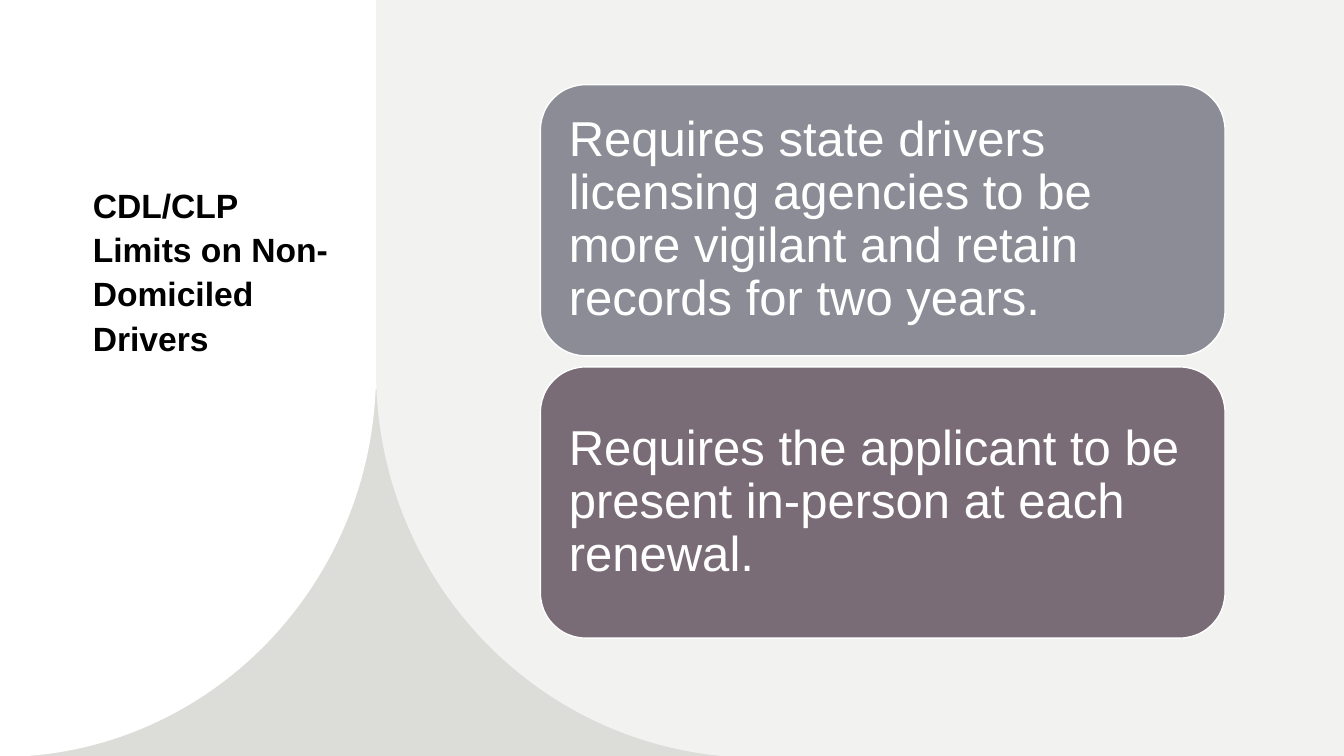
from lxml import etree
from pptx import Presentation
from pptx.dml.color import RGBColor
from pptx.enum.shapes import MSO_SHAPE
from pptx.enum.text import MSO_ANCHOR, MSO_AUTO_SIZE, PP_ALIGN
from pptx.oxml.ns import qn
from pptx.util import Inches, Pt

RECT, ROUNDED = MSO_SHAPE.RECTANGLE, MSO_SHAPE.ROUNDED_RECTANGLE
TOP, MIDDLE = MSO_ANCHOR.TOP, MSO_ANCHOR.MIDDLE
LEFT = PP_ALIGN.LEFT

TITLE = "CDL/CLP Limits on Non-Domiciled Drivers"
CARDS = [
    ("Requires state drivers licensing agencies to be more vigilant and retain records for two years.", "card_1"),
    ("Requires the applicant to be present in-person at each renewal.", "card_2"),
]

THEME = {
    "font": "Arial", "title_size": 24, "card_size": 35,
    "title": "000000", "white": "FFFFFF", "base": "DCDDD8", "panel": "F2F3F1",
    "card_1": "8C8C96", "card_2": "7A6C76",
}

WIDTH, HEIGHT = 13.33, 7.5
SPLIT = 3.73  # edge between the white and the grey panel
CARD_LEFT, CARD_TOP, CARD_W, CARD_H, CARD_GAP = 5.36, 0.84, 6.79, 2.69, 0.11

# Straight corners, then one curve: two control points and its end
WHITE_PANEL = ([(0, 0), (SPLIT, 0), (SPLIT, 3.69)],
               [(SPLIT, 5.8), (2.06, 7.51), (0, 7.51)])
GREY_PANEL = ([(SPLIT, 0), (WIDTH, 0), (WIDTH, 7.51), (7.29, 7.51)],
              [(5.3, 7.39), (SPLIT, 5.73), (SPLIT, 3.68)])


def color(name):
    return RGBColor.from_string(THEME[name])


def paint(shape, fill):
    shape.shadow.inherit = False
    shape.fill.solid()
    shape.fill.fore_color.rgb = color(fill)
    shape.line.fill.background()


def add_panel(s, corners, curve, fill):
    """Draw an outline whose last three points become one Bezier segment."""
    points = [(Inches(x), Inches(y)) for x, y in corners + curve]
    builder = s.shapes.build_freeform(*points[0], scale=1.0)
    builder.add_line_segments(points[1:], close=True)
    panel = builder.convert_to_shape()
    paint(panel, fill)
    lines = list(panel._element.iter(qn("a:lnTo")))[-3:]
    bezier = etree.Element(qn("a:cubicBezTo"))
    lines[0].addprevious(bezier)
    for line in lines:
        bezier.append(line[0])
        line.getparent().remove(line)


def set_text(shape, text, size, ink, spacing, anchor, bold=False):
    tf = shape.text_frame
    tf.text = text
    tf.word_wrap = True
    tf.auto_size = MSO_AUTO_SIZE.NONE
    tf.vertical_anchor = anchor
    p = tf.paragraphs[0]
    p.alignment = LEFT
    p.line_spacing = spacing
    font = p.runs[0].font
    font.name, font.size, font.bold = THEME["font"], Pt(THEME[size]), bold
    font.color.rgb = color(ink)
    return tf


def add_card(s, index, text, fill):
    top = CARD_TOP + index * (CARD_H + CARD_GAP)
    card = s.shapes.add_shape(ROUNDED, Inches(CARD_LEFT), Inches(top),
                              Inches(CARD_W), Inches(CARD_H))
    paint(card, fill)
    card.line.color.rgb = color("white")
    card.line.width = Pt(1)
    tf = set_text(card, text, "card_size", "white", 0.9, MIDDLE)
    tf.margin_left = tf.margin_right = tf.margin_top = tf.margin_bottom = Inches(0.15)


def main():
    prs = Presentation()
    prs.slide_width, prs.slide_height = Inches(WIDTH), Inches(HEIGHT)
    s = prs.slides.add_slide(prs.slide_layouts[5])

    base = s.shapes.add_shape(RECT, 0, Inches(3.86), Inches(7.37), Inches(3.64))
    paint(base, "base")
    add_panel(s, *WHITE_PANEL, "white")
    add_panel(s, *GREY_PANEL, "panel")

    title = s.shapes.title
    title.left, title.top = Inches(0.82), Inches(1.74)
    title.width, title.height = Inches(2.63), Inches(2.73)
    set_text(title, TITLE, "title_size", "title", 1.1, TOP, bold=True)
    s.shapes._spTree.append(title._element)  # bring in front of the panels

    for i, (text, fill) in enumerate(CARDS):
        add_card(s, i, text, fill)
    prs.save("out.pptx")


if __name__ == "__main__":
    main()
